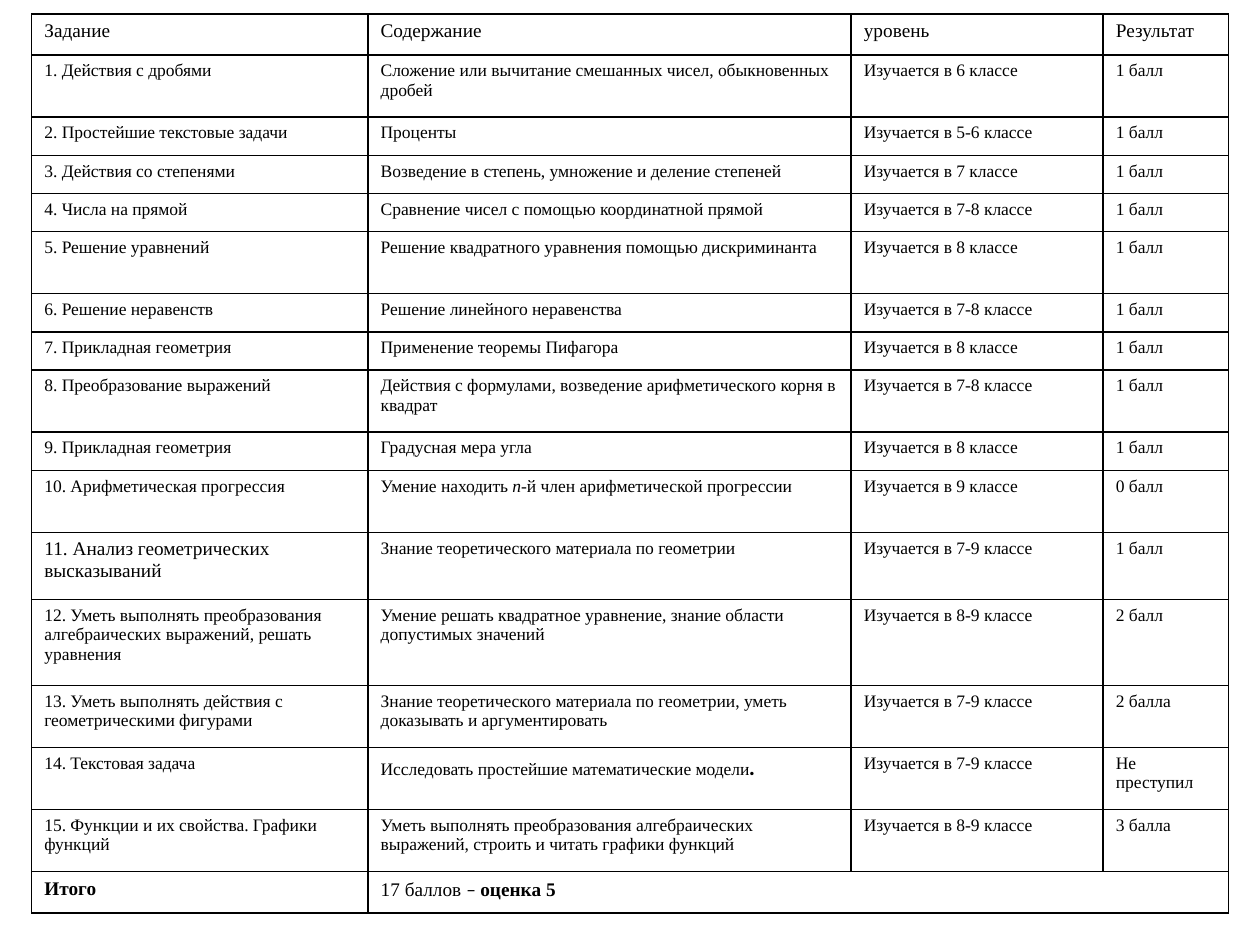
from dataclasses import dataclass

from lxml import etree
from pptx import Presentation
from pptx.dml.color import RGBColor
from pptx.oxml.ns import qn
from pptx.util import Cm, Pt


@dataclass(frozen=True)
class Theme:
    ink: str = "000000"
    font: str = "Times New Roman"
    accent_font: str = "Calibri"
    body: int = 10
    large: int = 11
    dot: int = 13
    border: float = 1


@dataclass(frozen=True)
class Run:
    text: str
    size: int = Theme.body
    font: str = Theme.font
    bold: bool = False
    italic: bool = False


class SlideBuilder:
    def __init__(self, slide, theme):
        self.slide = slide
        self.theme = theme

    def table(self, left, top, widths, heights):
        frame = self.slide.shapes.add_table(
            len(heights), len(widths), Cm(left), Cm(top),
            Cm(sum(widths)), Cm(sum(heights)))
        tbl = frame.table
        tbl.first_row = tbl.horz_banding = False
        for column, width in zip(tbl.columns, widths):
            column.width = Cm(width)
        for row, height in zip(tbl.rows, heights):
            row.height = Cm(height)
        for cell in tbl.iter_cells():
            cell.fill.background()
            self.borders(cell)
        return tbl

    def borders(self, cell):
        tc_pr = cell._tc.get_or_add_tcPr()
        for i, side in enumerate(("a:lnL", "a:lnR", "a:lnT", "a:lnB")):
            ln = etree.Element(qn(side), w=str(Pt(self.theme.border)))
            fill = etree.SubElement(ln, qn("a:solidFill"))
            etree.SubElement(fill, qn("a:srgbClr"), val=self.theme.ink)
            tc_pr.insert(i, ln)

    def text(self, cell, content):
        runs = [Run(content)] if isinstance(content, str) else content
        p = cell.text_frame.paragraphs[0]
        for run in runs:
            r = p.add_run()
            r.text = run.text
            r.font.size = Pt(run.size)
            r.font.name = run.font
            r.font.bold = run.bold
            r.font.italic = run.italic
            r.font.color.rgb = RGBColor.from_string(self.theme.ink)


THEME = Theme()

# Row heights and column widths, cm
EDGE, ONE, TWO, TWO_LARGE, THREE = 0.83, 0.77, 1.25, 1.36, 1.73
WIDTHS = (6.78, 9.74, 5.08, 2.52)

HEADER = ("Задание", "Содержание", "уровень", "Результат")

# Height, task, content, school year, result
TASKS = [
    (TWO, "Действия с дробями",
     "Сложение или вычитание смешанных чисел, обыкновенных дробей", "6", "1 балл"),
    (ONE, "Простейшие текстовые задачи", "Проценты", "5-6", "1 балл"),
    (ONE, "Действия со степенями",
     "Возведение в степень, умножение и деление степеней", "7", "1 балл"),
    (ONE, "Числа на прямой",
     "Сравнение чисел с помощью координатной прямой", "7-8", "1 балл"),
    (TWO, "Решение уравнений",
     "Решение квадратного уравнения помощью дискриминанта", "8", "1 балл"),
    (ONE, "Решение неравенств", "Решение линейного неравенства", "7-8", "1 балл"),
    (ONE, "Прикладная геометрия", "Применение теоремы Пифагора", "8", "1 балл"),
    (TWO, "Преобразование выражений",
     "Действия с формулами, возведение арифметического корня в квадрат",
     "7-8", "1 балл"),
    (ONE, "Прикладная геометрия", "Градусная мера угла", "8", "1 балл"),
    (TWO, "Арифметическая прогрессия",
     [Run("Умение находить "), Run("п", italic=True),
      Run("-й член арифметической прогрессии")], "9", "0 балл"),
    (TWO_LARGE, "Анализ геометрических высказываний",
     "Знание теоретического материала по геометрии", "7-9", "1 балл"),
    (THREE, "Уметь выполнять преобразования алгебраических выражений, решать уравнения",
     "Умение решать квадратное уравнение, знание области допустимых значений",
     "8-9", "2 балл"),
    (TWO, "Уметь выполнять действия с геометрическими фигурами",
     "Знание теоретического материала по геометрии, уметь доказывать и аргументировать",
     "7-9", "2 балла"),
    (TWO, "Текстовая задача",
     [Run("Исследовать простейшие математические модели"),
      Run(".", THEME.dot, THEME.accent_font, bold=True, italic=True)],
     "7-9", "Не преступил"),
    (TWO, "Функции и их свойства. Графики функций",
     "Уметь выполнять преобразования алгебраических выражений, "
     "строить и читать графики функций", "8-9", "3 балла"),
]

TOTAL = (
    [Run("Итого", THEME.large, bold=True)],
    [Run("17 баллов ", THEME.large),
     Run("– ", THEME.large, THEME.accent_font),
     Run("оценка 5", THEME.large, bold=True)],
)


def main():
    prs = Presentation()
    prs.slide_width, prs.slide_height = Cm(25.4), Cm(19.05)
    s = SlideBuilder(prs.slides.add_slide(prs.slide_layouts[6]), THEME)

    # Grid, with the total spanning the last three columns
    heights = [EDGE, *(task[0] for task in TASKS), EDGE]
    tbl = s.table(0.64, 0.28, WIDTHS, heights)
    last = len(heights) - 1
    tbl.cell(last, 1).merge(tbl.cell(last, 3))

    # Header, tasks and total
    rows = [[[Run(title, THEME.large)] for title in HEADER]]
    for number, (height, task, content, year, result) in enumerate(TASKS, 1):
        size = THEME.large if height == TWO_LARGE else THEME.body
        rows.append(([Run(f"{number}. {task}", size)], content,
                     f"Изучается в {year} классе", result))
    rows.append(TOTAL)
    for i, row in enumerate(rows):
        for j, content in enumerate(row):
            s.text(tbl.cell(i, j), content)

    prs.save("out.pptx")


if __name__ == "__main__":
    main()
